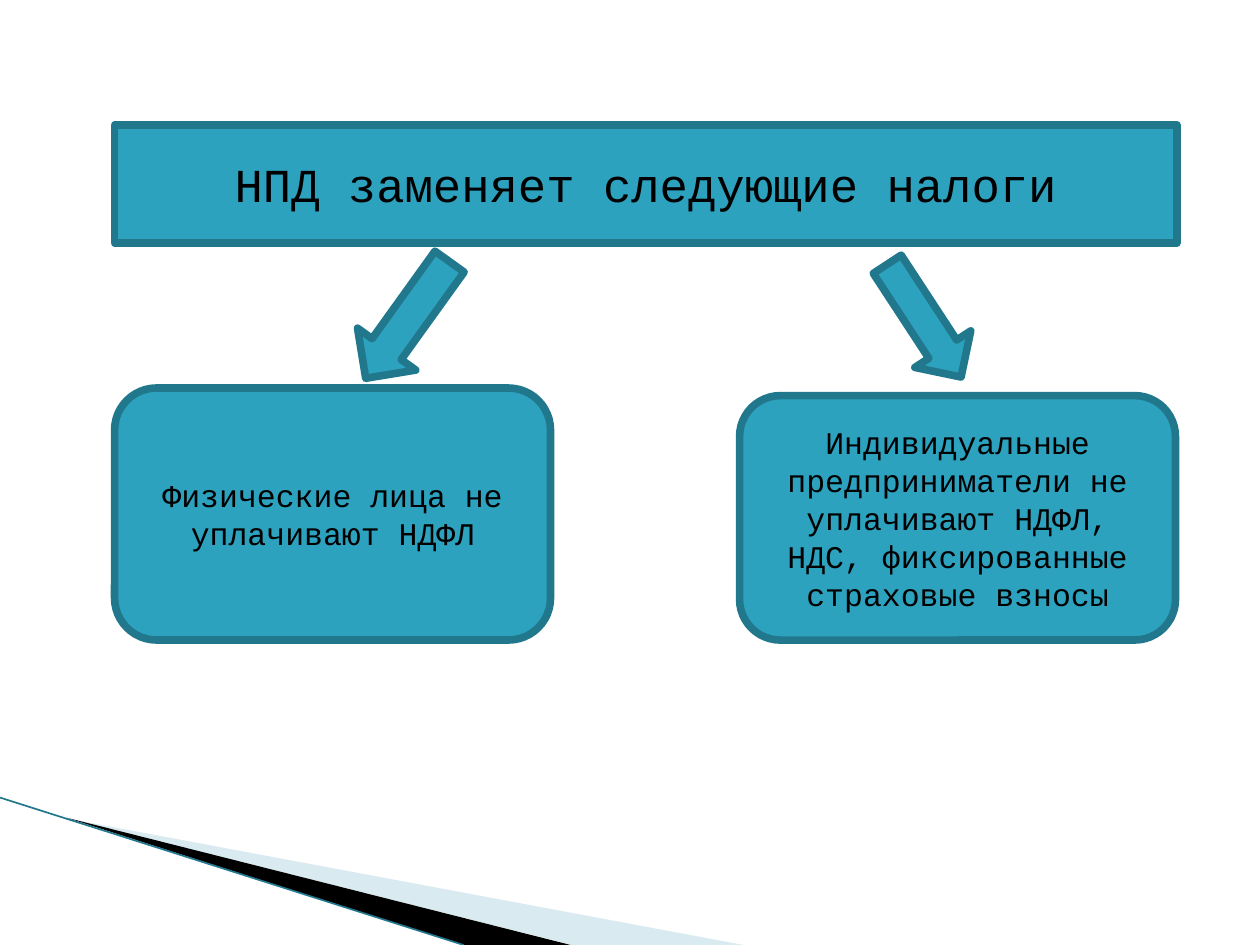
"""Build a slide showing which taxes the NPD regime replaces."""
from dataclasses import dataclass

from lxml import etree
from pptx import Presentation
from pptx.dml.color import RGBColor
from pptx.enum import shapes, text
from pptx.oxml import ns
from pptx.util import Inches, Pt


@dataclass(frozen=True)
class Theme:
    font: str = "Courier New"
    fill: str = "2DA2BF"
    edge: str = "21788D"
    ink: str = "000000"
    pale: str = "A0CBDC"
    title_size: float = 27
    body_size: float = 18
    edge_width: float = 4.33
    hairline: float = 0.95


@dataclass(frozen=True)
class Box:
    left: float
    top: float
    width: float
    height: float
    text: str = ""
    rotation: float = 0


@dataclass(frozen=True)
class Wedge:
    points: tuple
    color: str
    opacity: int = 100


THEME = Theme()
TITLE = Box(0.91, 0.99, 8.43, 0.94, "НПД заменяет следующие налоги")
CARDS = (
    Box(0.91, 3.08, 3.46, 2, "Физические лица не уплачивают НДФЛ"),
    Box(5.87, 3.14, 3.46, 1.94,
        "Индивидуальные предприниматели не уплачивают НДФЛ, НДС, "
        "фиксированные страховые взносы"),
)
ARROWS = (
    Box(2.95, 1.97, 0.57, 1.14, rotation=35.7),
    Box(7.07, 2.01, 0.53, 1.07, rotation=326.8),
)
WEDGES = (
    Wedge(((0.55, 6.5), (5.9, 7.5), (4.54, 7.5)), THEME.pale, 40),
    Wedge(((0.53, 6.49), (4.53, 7.5), (3.68, 7.5)), THEME.ink),
)


def write(sp, content: str, *, size: float, color: str = THEME.ink,
          font: str = THEME.font) -> None:
    """Fill a shape with centred text in the given format."""
    tf = sp.text_frame
    tf.word_wrap = True
    tf.auto_size = text.MSO_AUTO_SIZE.NONE
    tf.vertical_anchor = text.MSO_ANCHOR.MIDDLE
    p = tf.paragraphs[0]
    p.alignment = text.PP_ALIGN.CENTER
    p.line_spacing = 1
    r = p.add_run()
    r.text = content
    r.font.name = font
    r.font.size = Pt(size)
    r.font.color.rgb = RGBColor.from_string(color)


def paint(sp) -> None:
    """Give a shape the teal fill and its heavy outline."""
    sp.fill.solid()
    sp.fill.fore_color.rgb = RGBColor.from_string(THEME.fill)
    sp.line.color.rgb = RGBColor.from_string(THEME.edge)
    sp.line.width = Pt(THEME.edge_width)


def add_box(slide, box: Box, kind: shapes.MSO_SHAPE) -> None:
    """Draw a painted preset shape with its optional text."""
    sp = slide.shapes.add_shape(kind, Inches(box.left), Inches(box.top),
                                Inches(box.width), Inches(box.height))
    sp.rotation = box.rotation
    sp.shadow.inherit = False
    paint(sp)
    if box.text:
        write(sp, box.text, size=THEME.body_size)


def set_title(slide, box: Box) -> None:
    """Turn the title placeholder into a rounded banner."""
    sp = slide.shapes.title
    sp.left, sp.top = Inches(box.left), Inches(box.top)
    sp.width, sp.height = Inches(box.width), Inches(box.height)
    geom = etree.Element(ns.qn("a:prstGeom"), prst="roundRect")
    etree.SubElement(geom, ns.qn("a:avLst"))
    sp.element.spPr.insert(1, geom)
    paint(sp)
    write(sp, box.text, size=THEME.title_size)


def add_wedge(slide, wedge: Wedge) -> None:
    """Draw one corner wedge."""
    start, *rest = [(Inches(x), Inches(y)) for x, y in wedge.points]
    builder = slide.shapes.build_freeform(*start)
    builder.add_line_segments(rest, close=True)
    sp = builder.convert_to_shape()
    sp.shadow.inherit = False
    sp.line.fill.background()
    sp.fill.solid()
    sp.fill.fore_color.rgb = RGBColor.from_string(wedge.color)
    if wedge.opacity < 100:
        color = sp.element.spPr.find(".//" + ns.qn("a:srgbClr"))
        etree.SubElement(color, ns.qn("a:alpha"), val=str(wedge.opacity * 1000))


def add_hairline(slide) -> None:
    """Draw the thin line along the corner wedges."""
    line = slide.shapes.add_connector(shapes.MSO_CONNECTOR.STRAIGHT, Inches(0),
                                      Inches(6.33), Inches(3.68), Inches(7.5))
    line.line.color.rgb = RGBColor.from_string(THEME.edge)
    line.line.width = Pt(THEME.hairline)
    etree.SubElement(line.element.spPr, ns.qn("a:effectLst"))


def main() -> None:
    """Build and save the slide."""
    prs = Presentation()
    prs.slide_width, prs.slide_height = Inches(10), Inches(7.5)
    slide = prs.slides.add_slide(prs.slide_layouts[5])
    for wedge in WEDGES:
        add_wedge(slide, wedge)
    add_hairline(slide)
    set_title(slide, TITLE)
    for arrow in ARROWS:
        add_box(slide, arrow, shapes.MSO_SHAPE.DOWN_ARROW)
    for card in CARDS:
        add_box(slide, card, shapes.MSO_SHAPE.ROUNDED_RECTANGLE)
    prs.save("out.pptx")


if __name__ == "__main__":
    main()
